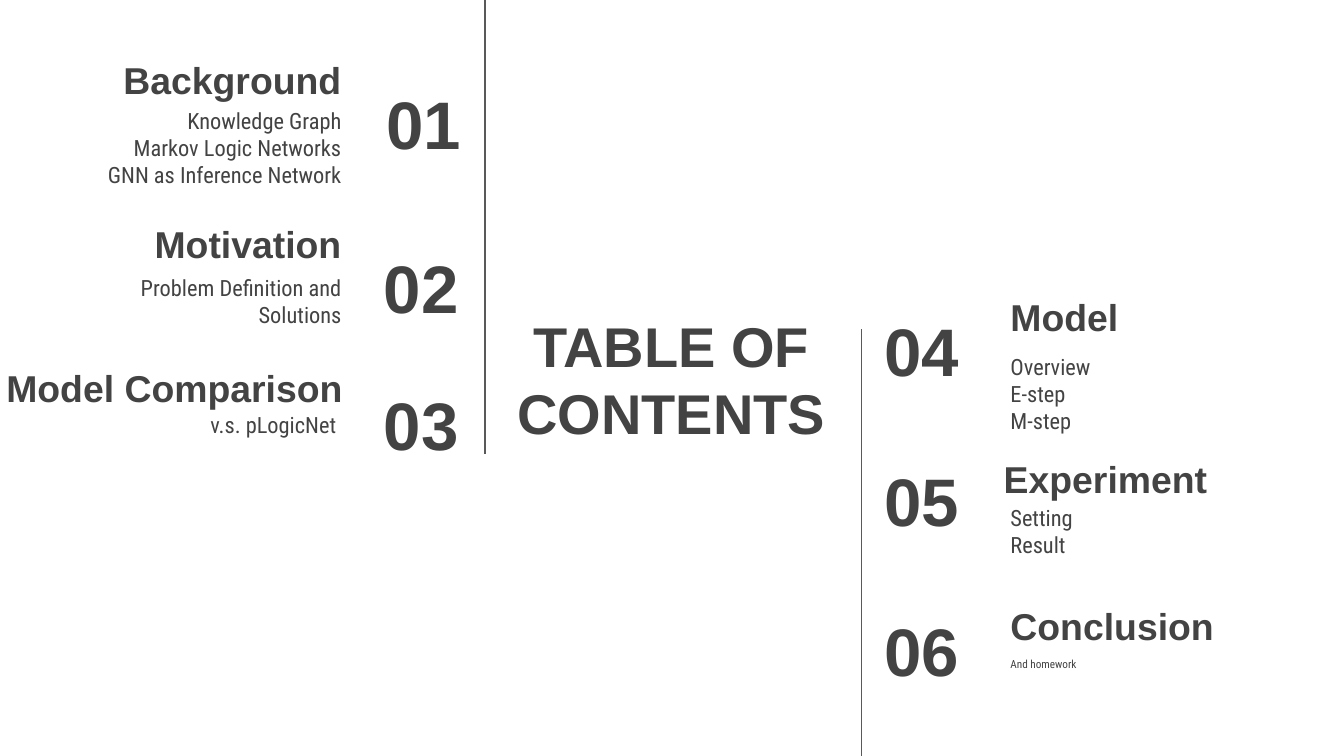
import pptx
import pptx.dml.color
import pptx.enum.shapes
import pptx.enum.text
import pptx.oxml.ns
import pptx.util
from lxml import etree

Inches = pptx.util.Inches
ALIGN = pptx.enum.text.PP_ALIGN
ANCHOR = pptx.enum.text.MSO_ANCHOR
DARK = "434343"


def rgb(value):
    return pptx.dml.color.RGBColor.from_string(value)


def add_text(box, lines, size, align, anchor, font="Arial", bold=True):
    sp = slide.shapes.add_textbox(*[Inches(v) for v in box])
    tf = sp.text_frame
    tf.word_wrap = True
    tf.vertical_anchor = anchor
    tf.margin_left = tf.margin_right = Inches(0.1)
    tf.margin_top = tf.margin_bottom = Inches(0.1)
    tf.text = "\n".join(lines)
    for p in tf.paragraphs:
        p.alignment = align
        p.font.name = font
        p.font.size = pptx.util.Pt(size)
        p.font.bold = bold
        p.font.color.rgb = rgb(DARK)


prs = pptx.Presentation()
prs.slide_width = Inches(10)
prs.slide_height = Inches(10) * 9 // 16
slide = prs.slides.add_slide(prs.slide_layouts[6])

add_text((3.7, 2.3, 2.59, 1.03), ["TABLE OF CONTENTS"], 30,
         ALIGN.CENTER, ANCHOR.MIDDLE)

for x, top, bottom in [(3.61, 0, 3.38), (6.41, 2.45, 5.64)]:
    line = slide.shapes.add_connector(
        pptx.enum.shapes.MSO_CONNECTOR.STRAIGHT,
        Inches(x), Inches(top), Inches(x), Inches(bottom))
    line.line.color.rgb = rgb("595959")
    line.line.width = pptx.util.Pt(0.75)
    etree.SubElement(line._element.spPr, pptx.oxml.ns.qn("a:effectLst"))

# Each entry: alignment, number (left, top, width), heading and its box,
# detail lines with their box and size
entries = [
    (ALIGN.RIGHT, (2.32, 0.6, 1.21), "Background", (0.48, 0.23, 2.16),
     ["Knowledge Graph", "Markov Logic Networks", "GNN as Inference Network"],
     (0.14, 0.7, 2.5), 12),
    (ALIGN.RIGHT, (2.3, 1.82, 1.21), "Motivation", (0.48, 1.45, 2.16),
     ["Problem Definition and Solutions"], (0.81, 1.94, 1.83), 12),
    (ALIGN.RIGHT, (2.3, 2.84, 1.21), "Model Comparison", (-0.2, 2.52, 2.85),
     ["v.s. pLogicNet "], (0.81, 2.96, 1.83), 12),
    (ALIGN.LEFT, (6.48, 2.29, 1.17), "Model", (7.42, 1.99, 2.16),
     ["Overview", "E-step", "M-step"], (7.42, 2.53, 1.83), 12),
    (ALIGN.LEFT, (6.48, 3.4, 1.17), "Experiment", (7.37, 3.2, 2.16),
     ["Setting", "Result"], (7.42, 3.65, 1.83), 12),
    (ALIGN.LEFT, (6.48, 4.52, 1.17), "Conclusion", (7.42, 4.29, 2.16),
     ["And homework"], (7.42, 4.84, 1.83), 6),
]
ROW_HEIGHT = 0.63
for i, entry in enumerate(entries, start=1):
    align, number_box, heading, heading_box, details, detail_box, size = entry
    add_text((*number_box, ROW_HEIGHT), [f"{i:02d}"], 36, align, ANCHOR.MIDDLE)
    add_text((*heading_box, ROW_HEIGHT), [heading], 20, align, ANCHOR.BOTTOM)
    add_text((*detail_box, ROW_HEIGHT), details, size, align, ANCHOR.TOP,
             font="Roboto Condensed", bold=False)

prs.save("out.pptx")
